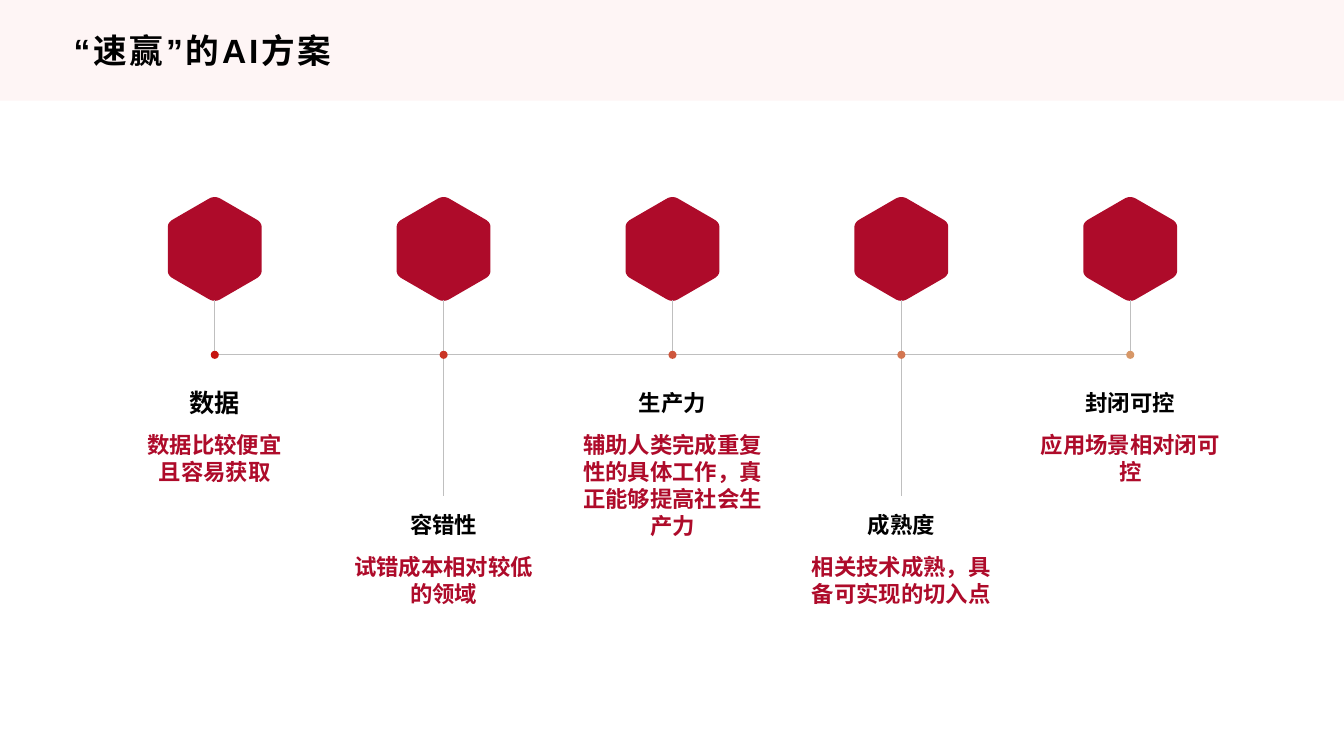
import pptx
import pptx.dml.color
import pptx.enum.lang
import pptx.enum.shapes
import pptx.enum.text
import pptx.oxml.ns
import pptx.util
from lxml import etree

PX = 9144  # EMU per px, 100 px to the inch
RGBColor = pptx.dml.color.RGBColor
BAND = RGBColor(0xFE, 0xF5, 0xF5)
CRIMSON = RGBColor(0xAE, 0x0B, 0x2A)
BLACK = RGBColor(0x00, 0x00, 0x00)
GREY = RGBColor(0xBF, 0xBF, 0xBF)
DOT_COLOURS = [
    RGBColor(0xC6, 0x14, 0x10),
    RGBColor(0xCA, 0x35, 0x26),
    RGBColor(0xCE, 0x56, 0x3C),
    RGBColor(0xD3, 0x76, 0x51),
    RGBColor(0xD7, 0x97, 0x67),
]
CRITERIA = [
    ("数据", 18, "数据比较便宜\n且容易获取"),
    ("容错性", 16, "试错成本相对较低的领域"),
    ("生产力", 16, "辅助人类完成重复性的具体工作，真正能够提高社会生产力"),
    ("成熟度", 16, "相关技术成熟，具备可实现的切入点"),
    ("封闭可控", 16, "应用场景相对闭可控"),
]
FIRST_X, STEP_X = 213, 227
AXIS_Y, HEXAGON_Y, HEXAGON_BOTTOM = 352, 247, 298
DOT_SIZE = 8
LABEL_WIDTH, HEADING_HEIGHT, DETAIL_HEIGHT = 200, 49, 153
# Upper right quarter of the rounded hexagon, in tenths of a px from its centre
HEXAGON_QUARTER = [
    (0, -515), (25, -512), (45, -505), (60, -497), (408, -296),
    (430, -282), (448, -265), (460, -245), (465, -225), (465, -195),
]


def px(*lengths):
    return [pptx.util.Emu(length * PX) for length in lengths]


def paint(shape, colour):
    shape.shadow.inherit = False
    shape.fill.solid()
    shape.fill.fore_color.rgb = colour
    shape.line.fill.background()


def format_text(text_frame, size, colour, alignment, spacing=0):
    for paragraph in text_frame.paragraphs:
        paragraph.alignment = alignment
        for run in paragraph.runs:
            font = run.font
            font.name = "Arial"
            font.size = pptx.util.Pt(size)
            font.bold = True
            font.color.rgb = colour
            font.language_id = pptx.enum.lang.MSO_LANGUAGE_ID.SIMPLIFIED_CHINESE
            properties = run._r.get_or_add_rPr()
            latin = properties.find(pptx.oxml.ns.qn("a:latin"))
            east_asian = etree.Element(pptx.oxml.ns.qn("a:ea"), typeface="Arial")
            latin.addnext(east_asian)
            if spacing:
                properties.set("spc", str(spacing * 100))


def add_title(slide, text):
    """Fill the title placeholder and put the pale band behind it."""
    title = slide.shapes.title
    title.left, title.top, title.width, title.height = px(63, 26, 1207, 48)
    title.text_frame.text = text
    title.text_frame.vertical_anchor = pptx.enum.text.MSO_ANCHOR.MIDDLE
    format_text(title.text_frame, 24, BLACK, pptx.enum.text.PP_ALIGN.LEFT, spacing=2)
    band = slide.shapes.add_shape(
        pptx.enum.shapes.MSO_SHAPE.RECTANGLE, *px(0, 0, 1333, 100))
    paint(band, BAND)
    title._element.addprevious(band._element)


def add_line(slide, x1, y1, x2, y2):
    line = slide.shapes.add_connector(
        pptx.enum.shapes.MSO_CONNECTOR.STRAIGHT, *px(x1, y1, x2, y2))
    line.line.color.rgb = GREY
    line.line.width = pptx.util.Pt(1)
    etree.SubElement(line._element.spPr, pptx.oxml.ns.qn("a:effectLst"))


def add_hexagon(slide, center_x, center_y):
    right = HEXAGON_QUARTER + [(x, -y) for x, y in reversed(HEXAGON_QUARTER)]
    outline = right + [(-x, y) for x, y in reversed(right)]
    points = [(center_x * 10 + x, center_y * 10 + y) for x, y in outline]
    builder = slide.shapes.build_freeform(*points[0], scale=PX / 10)
    builder.add_line_segments(points[1:], close=True)
    paint(builder.convert_to_shape(), CRIMSON)


def add_dot(slide, center_x, center_y, colour):
    corner = center_x - DOT_SIZE // 2, center_y - DOT_SIZE // 2
    dot = slide.shapes.add_shape(
        pptx.enum.shapes.MSO_SHAPE.OVAL, *px(*corner, DOT_SIZE, DOT_SIZE))
    paint(dot, colour)


def add_label(slide, center_x, top, height, text, size, colour, anchor):
    box = slide.shapes.add_textbox(
        *px(center_x - LABEL_WIDTH // 2, top, LABEL_WIDTH, height))
    text_frame = box.text_frame
    text_frame.word_wrap = True
    text_frame.vertical_anchor = anchor
    text_frame.text = text
    format_text(text_frame, size, colour, pptx.enum.text.PP_ALIGN.CENTER)


def add_criterion(slide, index, heading, heading_size, detail):
    """Draw one timeline stop; every second one hangs lower on a longer stem."""
    center_x = FIRST_X + index * STEP_X
    is_low = index % 2 == 1
    heading_top = 496 if is_low else 375
    stem_end = 492 if is_low else AXIS_Y - DOT_SIZE // 2
    anchors = pptx.enum.text.MSO_ANCHOR
    add_hexagon(slide, center_x, HEXAGON_Y)
    add_line(slide, center_x, HEXAGON_BOTTOM, center_x, stem_end)
    add_dot(slide, center_x, AXIS_Y, DOT_COLOURS[index])
    add_label(slide, center_x, heading_top, HEADING_HEIGHT,
              heading, heading_size, BLACK, anchors.MIDDLE)
    add_label(slide, center_x, heading_top + HEADING_HEIGHT - 1, DETAIL_HEIGHT,
              detail, 16, CRIMSON, anchors.TOP)


def main():
    presentation = pptx.Presentation()
    presentation.slide_width, presentation.slide_height = px(1333, 750)
    title_only = presentation.slide_layouts[5]
    slide = presentation.slides.add_slide(title_only)
    add_title(slide, "“速赢”的AI方案")
    last_x = FIRST_X + (len(CRITERIA) - 1) * STEP_X
    add_line(slide, FIRST_X - DOT_SIZE // 2, AXIS_Y, last_x + DOT_SIZE // 2, AXIS_Y)
    for index, criterion in enumerate(CRITERIA):
        add_criterion(slide, index, *criterion)
    presentation.save("out.pptx")


if __name__ == "__main__":
    main()
